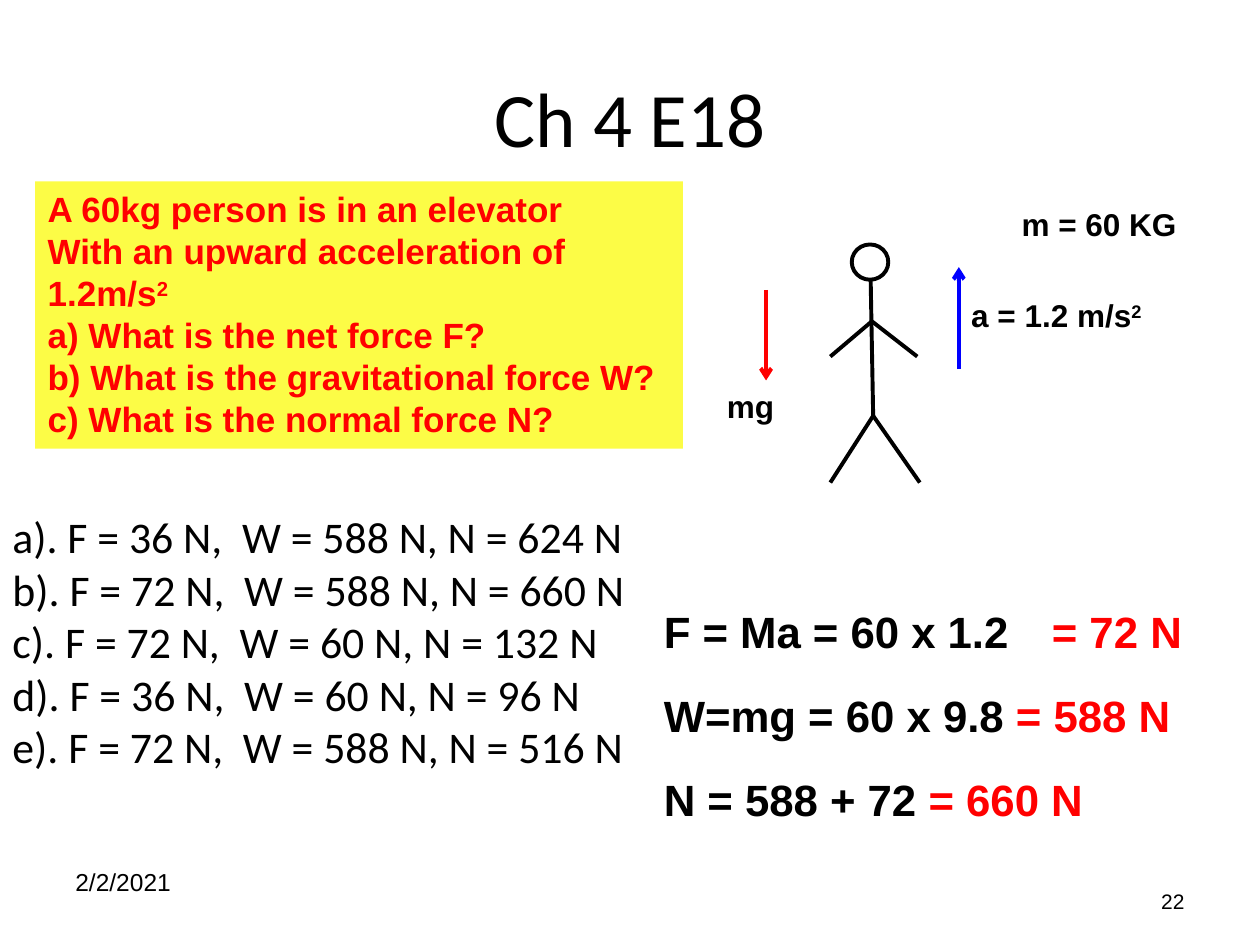
import pptx
import pptx.util
import pptx.dml.color
import pptx.enum.shapes
import pptx.enum.text
import pptx.oxml
import pptx.oxml.ns

BLACK = pptx.dml.color.RGBColor(0x00, 0x00, 0x00)
RED = pptx.dml.color.RGBColor(0xFF, 0x00, 0x00)
BLUE = pptx.dml.color.RGBColor(0x00, 0x00, 0xFF)
YELLOW = pptx.dml.color.RGBColor(0xFC, 0xFC, 0x46)
ALIGN = pptx.enum.text.PP_ALIGN
ANCHOR = pptx.enum.text.MSO_ANCHOR
COLUMNS, ROWS = 100, 75


def write_text(shape, *lines, font="Arial", size=18, color=BLACK, bold=False,
               align=ALIGN.LEFT, anchor=ANCHOR.TOP, hanging=0):
    frame = shape.text_frame
    frame.word_wrap = True
    frame.vertical_anchor = anchor
    for number, line in enumerate(lines):
        para = frame.add_paragraph() if number else frame.paragraphs[0]
        para.alignment = align
        if hanging:
            indent = pptx.util.Inches(hanging)
            properties = para._p.get_or_add_pPr()
            properties.set("marL", str(indent))
            properties.set("indent", str(-indent))
        for piece in [line] if isinstance(line, str) else line:
            words, changes = (piece, {}) if isinstance(piece, str) else piece
            span = para.add_run()
            span.text = words
            span.font.name = font
            span.font.size = pptx.util.Pt(size)
            span.font.bold = bold
            span.font.color.rgb = changes.get("color", color)
            if changes.get("raised"):
                span.font._element.set("baseline", "30000")


class SlideBuilder:
    line_width = pptx.util.Pt(2.25)

    def __init__(self, deck):
        self.column = deck.slide_width / COLUMNS
        self.row = deck.slide_height / ROWS
        self.slide = deck.slides.add_slide(deck.slide_layouts[5])

    def point(self, x, y):
        return round(x * self.column), round(y * self.row)

    def area(self, x, y, width, height):
        return self.point(x, y) + self.point(width, height)

    def title(self, words, area):
        box = self.slide.shapes.title
        box.left, box.top, box.width, box.height = self.area(*area)
        write_text(box, words, font="Calibri", size=44,
                   align=ALIGN.CENTER, anchor=ANCHOR.MIDDLE)

    def text(self, area, *lines, **style):
        write_text(self.slide.shapes.add_textbox(*self.area(*area)), *lines, **style)

    def panel(self, area, fill, *lines, **style):
        box = self.slide.shapes.add_shape(
            pptx.enum.shapes.MSO_SHAPE.RECTANGLE, *self.area(*area))
        box.shadow.inherit = False
        box.fill.solid()
        box.fill.fore_color.rgb = fill
        box.line.fill.background()
        write_text(box, *lines, **style)

    def line(self, start, end, color=BLACK, arrow=False, shapes=None):
        shapes = shapes or self.slide.shapes
        stroke = shapes.add_connector(pptx.enum.shapes.MSO_CONNECTOR.STRAIGHT,
                                      *self.point(*start), *self.point(*end))
        stroke.line.color.rgb = color
        stroke.line.width = self.line_width
        if arrow:
            head = pptx.oxml.parse_xml(
                f'<a:tailEnd {pptx.oxml.ns.nsdecls("a")} type="arrow"/>')
            stroke.line._get_or_add_ln().append(head)
        stroke._element.spPr.append(
            pptx.oxml.parse_xml(f'<a:effectLst {pptx.oxml.ns.nsdecls("a")}/>'))

    def stick_figure(self, head, limbs):
        figure = self.slide.shapes.add_group_shape()
        circle = figure.shapes.add_shape(
            pptx.enum.shapes.MSO_SHAPE.OVAL, *self.area(*head))
        circle.shadow.inherit = False
        circle.fill.background()
        circle.line.color.rgb = BLACK
        circle.line.width = self.line_width
        for start, end in limbs:
            self.line(start, end, shapes=figure.shapes)


def main():
    deck = pptx.Presentation()
    deck.slide_width = pptx.util.Inches(10)
    deck.slide_height = pptx.util.Inches(7.5)
    page = SlideBuilder(deck)
    squared = ("2", {"raised": True})

    page.text((71.7, 69.5, 23.3, 4), "22", size=12,
              align=ALIGN.RIGHT, anchor=ANCHOR.MIDDLE)
    page.text((5, 68.3, 23.3, 5.2), "2/2/2021", size=14)
    page.title("Ch 4 E18", (5, 3, 90, 12.5))

    neck, shoulder, hip = (69.1, 22.1), (69.2, 25.5), (69.3, 33)
    page.stick_figure((67.6, 19.4, 2.9, 2.8), [
        (neck, hip),
        (shoulder, (72.8, 28.3)),
        (shoulder, (65.9, 28.3)),
        (hip, (65.9, 38.3)),
        (hip, (73, 38.3)),
    ])
    page.line((60.8, 23), (60.8, 30.2), color=RED, arrow=True)
    page.line((76.1, 29.3), (76.1, 21.2), color=BLUE, arrow=True)

    page.text((80.1, 15.8, 17.4, 4), "m = 60 KG", bold=True)
    page.text((76.1, 23, 21.4, 4), ["a = 1.2 m/s", squared], bold=True)
    page.text((56.7, 30.2, 7.1, 4), "mg", bold=True)

    first_row, row_step = 47.5, 6.67
    page.text((82.5, first_row, 13.3, 5.2), "= 72 N", size=25, color=RED, bold=True)
    solutions = [
        ("F = Ma = 60 x 1.2", "", 31.7),
        ("W=mg = 60 x 9.8 ", "= 588 N", 45.8),
        ("N = 588 + 72 ", "= 660 N", 45.8),
    ]
    for number, (working, result, width) in enumerate(solutions):
        line = [working, (result, {"color": RED})] if result else working
        page.text((51.7, first_row + number * row_step, width, 5.2), line,
                  size=25, bold=True)

    page.panel((2.8, 14.4, 51.4, 21.2), YELLOW,
               "A 60kg person is in an elevator",
               "With an upward acceleration of",
               ["1.2m/s", squared],
               "a) What is the net force F?",
               "b) What is the gravitational force W?",
               "c) What is the normal force N?",
               size=20, color=RED, bold=True, hanging=0.38)

    choices = [("a", 36, 588, 624), ("b", 72, 588, 660), ("c", 72, 60, 132),
               ("d", 36, 60, 96), ("e", 72, 588, 516)]
    page.text((0, 40, 53.9, 35),
              *[f"{letter}). F = {net} N,  W = {weight} N, N = {normal} N"
                for letter, net, weight, normal in choices],
              font="Calibri", size=25)

    deck.save("out.pptx")


if __name__ == "__main__":
    main()
